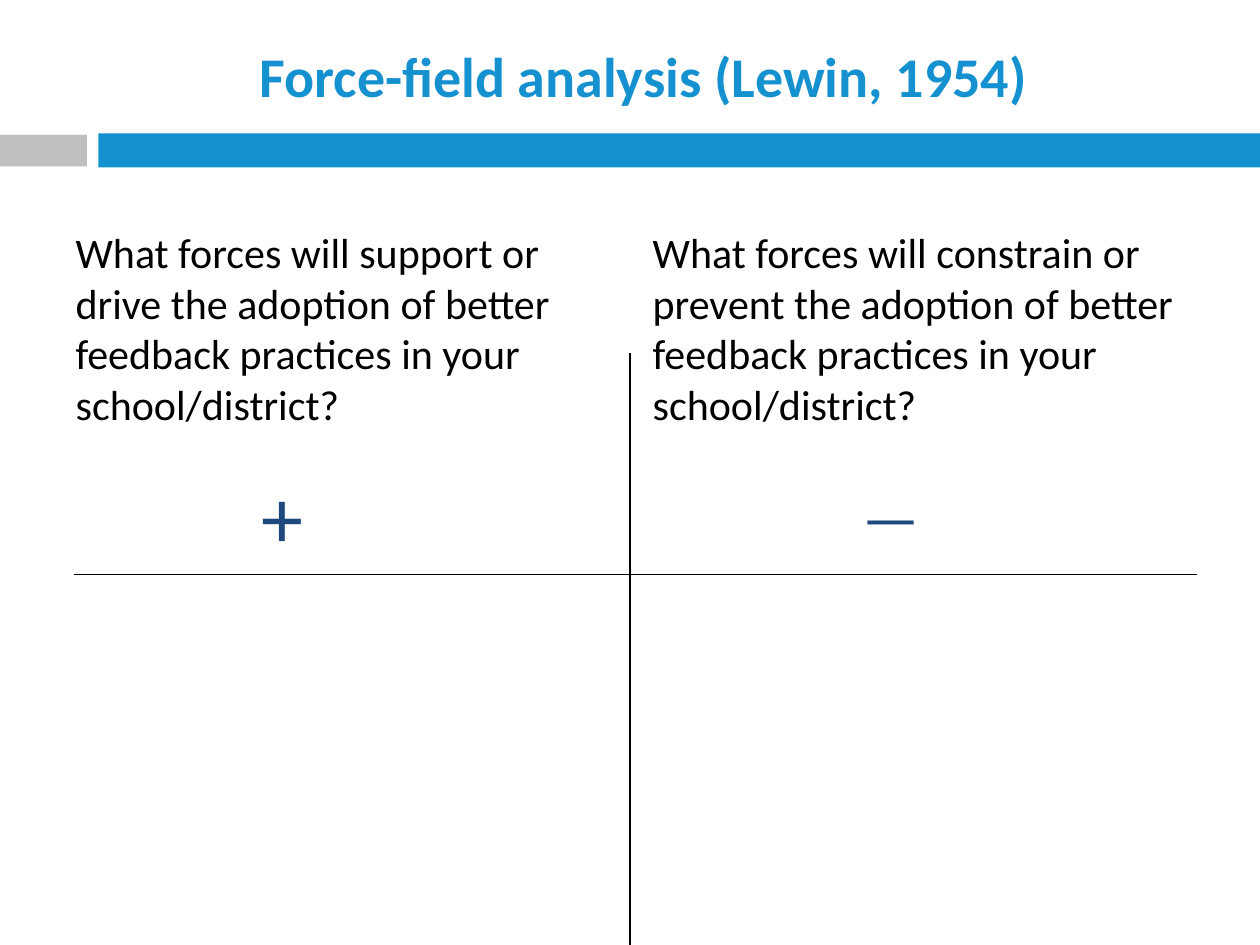
from pptx import Presentation
from pptx.dml.color import RGBColor
from pptx.enum.shapes import MSO_CONNECTOR as Link, MSO_SHAPE as Shape
from pptx.enum.text import MSO_ANCHOR as Anchor, MSO_AUTO_SIZE as Fit, PP_ALIGN as Align
from pptx.oxml.ns import qn
from pptx.util import Inches, Pt
from lxml import etree

BLUE = RGBColor(0x16, 0x91, 0xD0)
GREY = RGBColor(0xBF, 0xBF, 0xBF)
NAVY = RGBColor(0x1F, 0x49, 0x7D)
BLACK = RGBColor(0, 0, 0)

ASK = "What forces will {} the adoption of better feedback practices in your school/district?"


def place(shape, left, top, width, height):
    shape.left, shape.top = Inches(left), Inches(top)
    shape.width, shape.height = Inches(width), Inches(height)


def write(shape, text, size=24, color=BLACK, bold=False, align=Align.LEFT,
          anchor=Anchor.TOP, wrap=True, fit=Fit.NONE):
    frame = shape.text_frame
    frame.text = text
    frame.word_wrap, frame.auto_size = wrap, fit
    frame.vertical_anchor = anchor
    para = frame.paragraphs[0]
    para.alignment = align
    para.space_before = Pt(0)
    props = para._p.get_or_add_pPr()
    props.set("marL", "0")
    props.set("indent", "0")
    etree.SubElement(props, qn("a:buNone"))
    font = para.runs[0].font
    font.name, font.size, font.bold = "Calibri", Pt(size), bold
    font.color.rgb = color


def bar(slide, left, top, width, height, color):
    rect = slide.shapes.add_shape(Shape.RECTANGLE, 0, 0, 0, 0)
    place(rect, left, top, width, height)
    rect.shadow.inherit = False
    rect.fill.solid()
    rect.fill.fore_color.rgb = color
    rect.line.fill.background()


def rule(slide, x1, y1, x2, y2):
    line = slide.shapes.add_connector(
        Link.STRAIGHT, Inches(x1), Inches(y1), Inches(x2), Inches(y2))
    line.line.color.rgb = BLACK
    line.line.width = Pt(1)
    etree.SubElement(line._element.spPr, qn("a:effectLst"))


def header(slide, left, top, width):
    """Title above a blue band with a grey tab at its left."""
    bar(slide, left, top + 0.8, width - left, 0.27, BLUE)
    bar(slide, 0, top + 0.81, left - 0.09, 0.25, GREY)
    title = slide.shapes.title
    place(title, left, top, 8.66, 0.68)
    write(title, "Force-field analysis (Lewin, 1954)", size=32, color=BLUE,
          bold=True, align=Align.CENTER, anchor=Anchor.MIDDLE)


def column(body, left, top, forces):
    place(body, left, top, 4.42, 4.95)
    write(body, ASK.format(forces))


def sign(slide, box, text, **style):
    label = slide.shapes.add_textbox(0, 0, 0, 0)
    place(label, *box)
    write(label, text, color=NAVY, fit=Fit.SHAPE_TO_FIT_TEXT, **style)


def chart(slide, left, top, right, bottom):
    """Two questions over a T of rules, each with its sign."""
    mid = (left + right) / 2
    holders = slide.placeholders
    column(holders[1], left, top, "support or drive")
    column(holders[2], mid + 0.08, top, "constrain or prevent")
    rule(slide, left + 0.09, top + 2.81, right, top + 2.81)
    rule(slide, mid, top + 1.05, mid, bottom)
    sign(slide, (left + 1.48, top + 1.89, 1.17, 0.9), "+", size=48)
    sign(slide, (mid + 1.75, top + 1.99, 0.72, 0.71), "—", size=36, wrap=False)


def main():
    deck = Presentation()
    deck.slide_width, deck.slide_height = Inches(10), Inches(7.5)
    slide = deck.slides.add_slide(deck.slide_layouts.get_by_name("Two Content"))
    header(slide, 0.78, 0.26, 10)
    chart(slide, 0.5, 1.75, 9.5, 7.5)
    deck.save("out.pptx")


if __name__ == "__main__":
    main()
